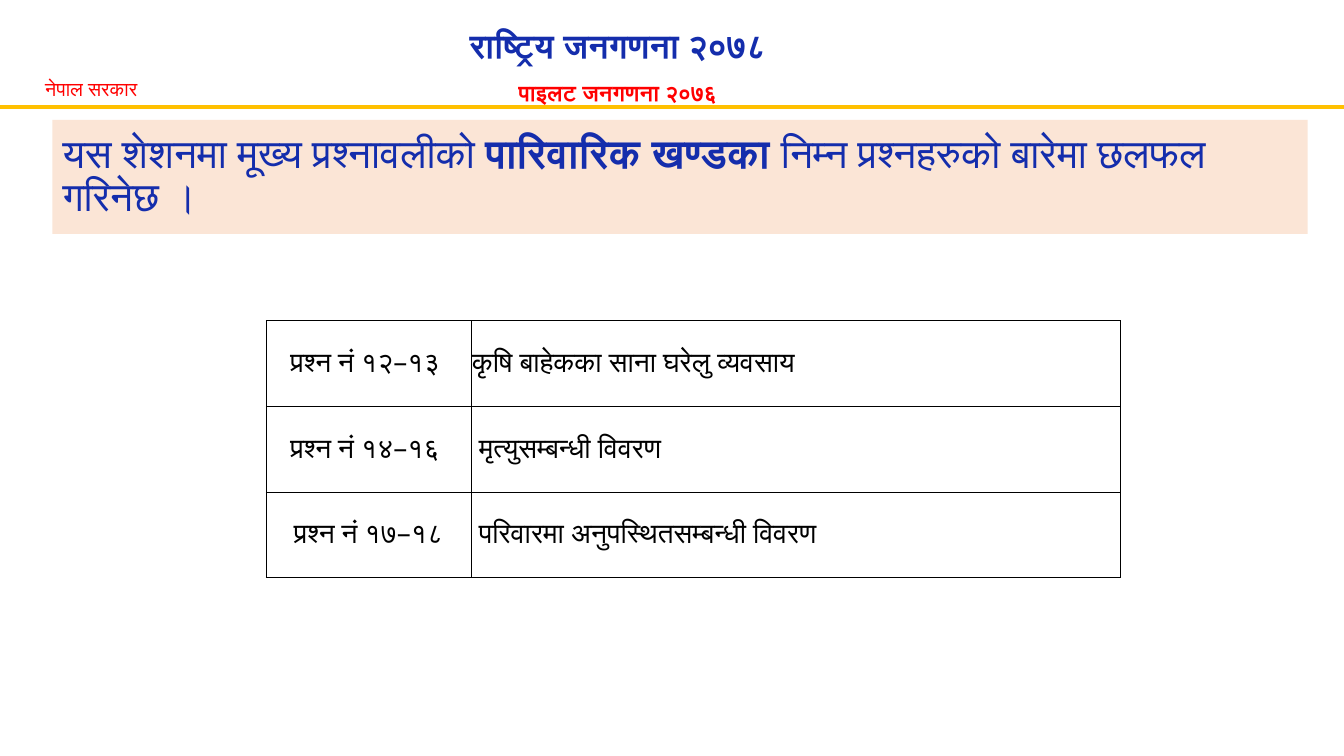
from dataclasses import dataclass, field
from typing import Any

from lxml.etree import SubElement as Sub
from pptx import Presentation
from pptx.dml.color import RGBColor as Rgb
from pptx.enum.shapes import MSO_CONNECTOR as Conn
from pptx.enum.text import MSO_ANCHOR as Anchor, MSO_AUTO_SIZE as Fit, PP_ALIGN as Align
from pptx.oxml.ns import qn
from pptx.util import Inches, Pt


@dataclass(frozen=True)
class Theme:
    blue: str = "142DAC"
    red: str = "FF0000"
    gold: str = "FFC000"
    peach: str = "FBE5D6"
    black: str = "000000"
    small: float = 14
    sub: float = 16
    cell: float = 20
    head: float = 24
    title: float = 28.8


@dataclass(frozen=True)
class Span:
    text: str
    face: str
    size: float
    color: str
    bold: bool = False


@dataclass(frozen=True)
class Block:
    box: tuple[float, float, float, float]
    lines: list[list[Span]]
    frame: dict[str, Any] = field(default_factory=dict)
    para: dict[str, Any] = field(default_factory=dict)


T = Theme()


def apply(item: Any, form: dict[str, Any]) -> None:
    for name, value in form.items():
        setattr(item, name, value)


def add_span(para: Any, span: Span) -> None:
    run = para.add_run()
    run.text = span.text
    apply(run.font, {"name": span.face, "size": Pt(span.size), "bold": span.bold})
    run.font.color.rgb = Rgb.from_string(span.color)


def fill_text(shape: Any, block: Block) -> None:
    spots = map(Inches, block.box)
    apply(shape, dict(zip(("left", "top", "width", "height"), spots)))
    apply(shape.text_frame, block.frame)
    para = shape.text_frame.paragraphs[0]
    apply(para, block.para)
    for at, line in enumerate(block.lines):
        if at:
            para.add_line_break()
        for span in line:
            add_span(para, span)


def add_edges(cell: Any) -> None:
    props = cell._tc.get_or_add_tcPr()
    for at, side in enumerate(("lnL", "lnR", "lnT", "lnB")):
        edge = Sub(props, qn(f"a:{side}"), w=str(Pt(0.5)))
        Sub(Sub(edge, qn("a:solidFill")), qn("a:srgbClr"), val=T.black)
        props.insert(at, edge)


def add_grid(slide: Any, rows: list[tuple[str, str]]) -> None:
    wide, high = (2.03, 6.44), 0.85
    grid = slide.shapes.add_table(
        len(rows), len(wide), Inches(2.64), Inches(3.18),
        Inches(sum(wide)), Inches(high * len(rows))).table
    apply(grid, {"first_row": False, "horz_banding": False})
    for col, width in zip(grid.columns, wide):
        col.width = Inches(width)
    looks = (("Arial", Align.CENTER), ("Roboto", Align.LEFT))
    for row, texts in zip(grid.rows, rows):
        row.height = Inches(high)
        for cell, text, (face, align) in zip(row.cells, texts, looks):
            inset = Inches(0.01)
            apply(cell, {"vertical_anchor": Anchor.MIDDLE, "margin_left": inset,
                         "margin_right": inset, "margin_top": inset, "margin_bottom": 0})
            cell.fill.background()
            add_edges(cell)
            para = cell.text_frame.paragraphs[0]
            para.alignment = align
            add_span(para, Span(text, face, T.cell, T.black))


def add_rule(slide: Any, top: float, width: float) -> None:
    rule = slide.shapes.add_connector(
        Conn.STRAIGHT, 0, Inches(top), Inches(width), Inches(top))
    rule.line.color.rgb = Rgb.from_string(T.gold)
    rule.line.width = Pt(3)
    Sub(rule._element.spPr, qn("a:effectLst"))


OFFICE = Block(
    (0.35, 0.71, 1.28, 0.34),
    [[Span("नेपाल सरकार", "Arial Narrow", T.small, T.red)]],
    {"word_wrap": False, "auto_size": Fit.SHAPE_TO_FIT_TEXT})
CENSUS = Block(
    (4.39, 0, 3.47, 1.08),
    [[Span("राष्ट्रिय जनगणना २०७८", "Roboto", T.head, T.blue, True)],
     [Span("पाइलट जनगणना २०७६", "Times New Roman", T.sub, T.red, True)]],
    {"word_wrap": True, "auto_size": Fit.SHAPE_TO_FIT_TEXT},
    {"alignment": Align.CENTER, "line_spacing": 1.5})
TOPIC = Block(
    (0.52, 1.19, 12.45, 1.13),
    [[Span("यस शेशनमा मूख्य प्रश्नावलीको ", "Arial Narrow", T.title, T.blue),
      Span("पारिवारिक खण्डका ", "Arial Narrow", T.title, T.blue, True),
      Span("निम्न प्रश्नहरुको बारेमा छलफल गरिनेछ ।", "Arial Narrow", T.title, T.blue)]],
    {"word_wrap": True, "auto_size": Fit.NONE, "vertical_anchor": Anchor.MIDDLE},
    {"alignment": Align.LEFT, "line_spacing": 0.9})
ROWS = [
    ("प्रश्न नं १२–१३ ", "कृषि बाहेकका साना घरेलु व्यवसाय"),
    ("प्रश्न नं १४–१६ ", " मृत्युसम्बन्धी विवरण"),
    ("प्रश्न नं १७–१८", " परिवारमा अनुपस्थितसम्बन्धी विवरण"),
]


def main() -> None:
    deck = Presentation()
    apply(deck, {"slide_width": Inches(13.33), "slide_height": Inches(7.5)})
    slide = deck.slides.add_slide(deck.slide_layouts[5])

    # Header band
    add_rule(slide, 1.06, 13.33)
    for block in (OFFICE, CENSUS):
        fill_text(slide.shapes.add_textbox(0, 0, 0, 0), block)

    # Session topic
    title = slide.shapes.title
    title.fill.solid()
    title.fill.fore_color.rgb = Rgb.from_string(T.peach)
    fill_text(title, TOPIC)

    # Question list
    add_grid(slide, ROWS)
    deck.save("out.pptx")


if __name__ == "__main__":
    main()
